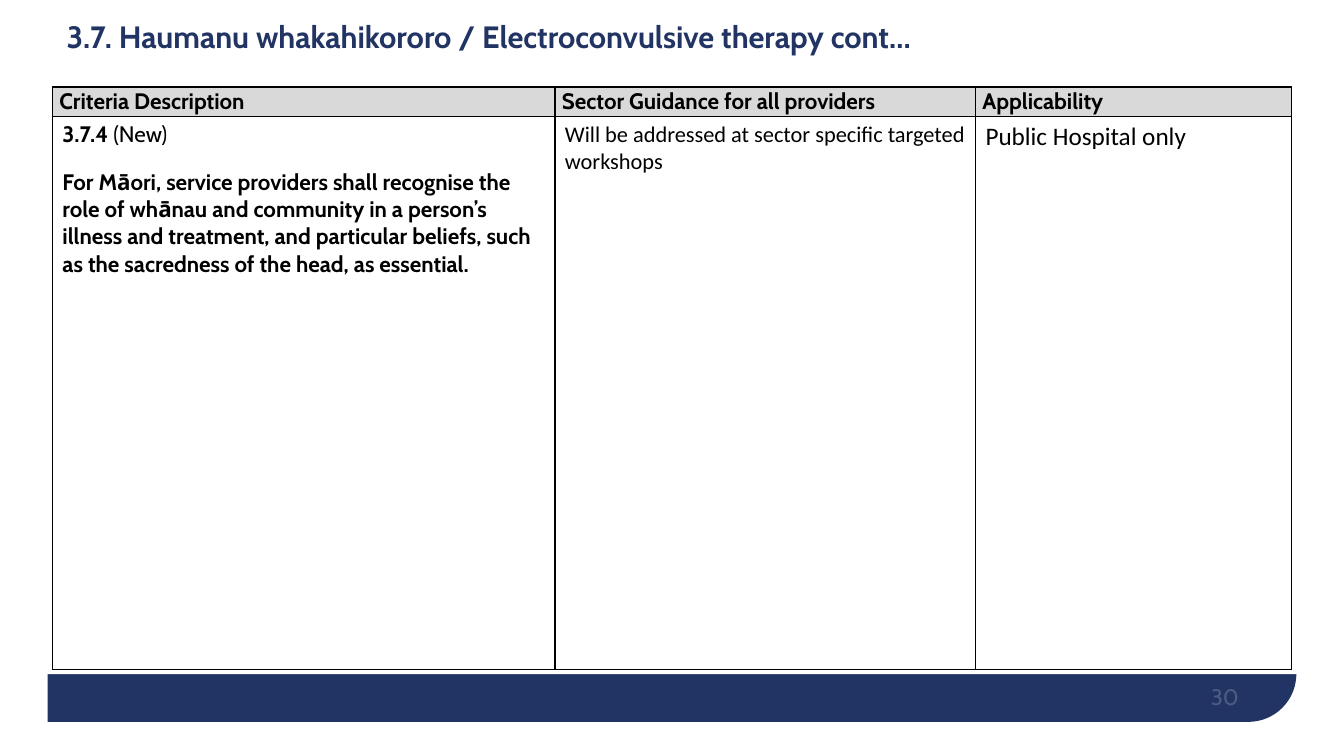
"""Build the electroconvulsive therapy criteria slide."""
from dataclasses import dataclass

from lxml import etree
from pptx import Presentation
from pptx.dml.color import RGBColor
from pptx.enum.shapes import MSO_SHAPE
from pptx.enum.text import MSO_ANCHOR, PP_ALIGN
from pptx.oxml.ns import qn
from pptx.util import Pt

LEFT, RIGHT = PP_ALIGN.LEFT, PP_ALIGN.RIGHT
TOP, MIDDLE, BOTTOM = MSO_ANCHOR.TOP, MSO_ANCHOR.MIDDLE, MSO_ANCHOR.BOTTOM
RECTANGLE, ONE_ROUND_CORNER = MSO_SHAPE.RECTANGLE, MSO_SHAPE.ROUND_1_RECTANGLE
TITLE_ONLY = 5


@dataclass(frozen=True)
class Theme:
    """Colours, fonts and type sizes."""
    navy: str = "213463"
    white: str = "FFFFFF"
    black: str = "000000"
    header_fill: str = "D9D9D9"
    heading_font: str = "Cabin"
    plain_font: str = "Calibri"
    title_size: int = 22
    large_size: int = 18
    text_size: int = 16


@dataclass(frozen=True)
class Span:
    """A stretch of text in one style."""
    text: str
    font: str
    size: int
    bold: bool = False


class SlideBuilder:
    """Draws elements on one page in one theme."""

    def __init__(self, page, theme):
        """Keep the page and the theme."""
        self.page = page
        self.theme = theme

    def style(self, span, font, size, color, bold=False):
        """Format one run."""
        span.font.name = font
        span.font.size = Pt(size)
        span.font.bold = bold
        span.font.color.rgb = RGBColor.from_string(color)

    def title(self, text, left, top, width, height):
        """Fill the title placeholder and bring it above the panels."""
        box = self.page.shapes.title
        box.left, box.top, box.width, box.height = map(Pt, (left, top, width, height))
        box.text_frame.text = text
        box.text_frame.vertical_anchor = MIDDLE
        para = box.text_frame.paragraphs[0]
        para.alignment = LEFT
        para.line_spacing = 0.9
        self.style(para.runs[0], self.theme.heading_font, self.theme.title_size,
                   self.theme.navy, True)
        self.page.shapes._spTree.append(box._element)

    def panel(self, kind, left, top, width, height, color):
        """Draw a plain filled panel."""
        panel = self.page.shapes.add_shape(kind, *map(Pt, (left, top, width, height)))
        panel.shadow.inherit = False
        panel.fill.solid()
        panel.fill.fore_color.rgb = RGBColor.from_string(color)
        panel.line.fill.background()
        return panel

    def rounded_panel(self, left, top, width, height, color, roundness):
        """Draw a panel with a rounded lower right corner."""
        panel = self.panel(ONE_ROUND_CORNER, left, top, width, height, color)
        panel.adjustments[0] = roundness
        panel.rotation = 180
        panel._element.spPr.find(qn("a:xfrm")).set("flipH", "1")

    def page_number(self, text, left, top, width, height, opacity):
        """Write a translucent page number."""
        box = self.page.shapes.add_textbox(*map(Pt, (left, top, width, height)))
        frame = box.text_frame
        frame.text = text
        frame.word_wrap = True
        frame.vertical_anchor = BOTTOM
        frame.margin_left = frame.margin_right = 0
        frame.margin_top = frame.margin_bottom = 0
        para = frame.paragraphs[0]
        para.alignment = RIGHT
        span = para.runs[0]
        self.style(span, self.theme.heading_font, self.theme.text_size, self.theme.white)
        color = span.font.fill._xPr.find(".//" + qn("a:srgbClr"))
        etree.SubElement(color, qn("a:alpha")).set("val", str(opacity * 1000))

    def borders(self, cell):
        """Give a cell thin black edges."""
        properties = cell._tc.get_or_add_tcPr()
        for index, edge in enumerate(("a:lnL", "a:lnR", "a:lnT", "a:lnB")):
            line = etree.Element(qn(edge), w=str(Pt(1)))
            fill = etree.SubElement(line, qn("a:solidFill"))
            etree.SubElement(fill, qn("a:srgbClr"), val=self.theme.black)
            properties.insert(index, line)

    def cell(self, cell, paragraphs, fill):
        """Fill a cell with paragraphs made of spans."""
        cell.fill.solid()
        cell.fill.fore_color.rgb = RGBColor.from_string(fill)
        self.borders(cell)
        frame = cell.text_frame
        for index, spans in enumerate(paragraphs):
            para = frame.add_paragraph() if index else frame.paragraphs[0]
            if index:
                para.space_before = Pt(6)
            para.space_after = Pt(9)
            for item in spans:
                span = para.add_run()
                span.text = item.text
                self.style(span, item.font, item.size, self.theme.black, item.bold)

    def table(self, left, top, widths, heights, headers, contents):
        """Draw a table with a header row and one content row."""
        table = self.page.shapes.add_table(
            len(heights), len(widths), Pt(left), Pt(top),
            Pt(sum(widths)), Pt(sum(heights))).table
        table.horz_banding = False
        for column, width in zip(table.columns, widths):
            column.width = Pt(width)
        for row, height in zip(table.rows, heights):
            row.height = Pt(height)
        for index, (header, content) in enumerate(zip(headers, contents)):
            head, body = table.cell(0, index), table.cell(1, index)
            head.margin_left = head.margin_right = Pt(5)
            head.margin_top = head.margin_bottom = 0
            head.vertical_anchor, body.vertical_anchor = MIDDLE, TOP
            label = Span(header, self.theme.heading_font, self.theme.text_size, True)
            self.cell(head, [[label]], self.theme.header_fill)
            self.cell(body, content, self.theme.white)


def main():
    """Create and save the deck."""
    deck = Presentation()
    deck.slide_width, deck.slide_height = Pt(960), Pt(540)
    theme = Theme()
    page = deck.slides.add_slide(deck.slide_layouts[TITLE_ONLY])
    builder = SlideBuilder(page, theme)
    heading, plain, size = theme.heading_font, theme.plain_font, theme.text_size

    builder.rounded_panel(34, 26.6, 892, 489, theme.navy, roundness=0.07)
    builder.panel(RECTANGLE, 0, 0, 960, 481.6, theme.white)
    builder.page_number("30", 669, 478.5, 216, 28.8, opacity=20)
    builder.title("3.7. Haumanu whakahikororo / Electroconvulsive therapy cont…",
                  40.3, 12.6, 828, 30)
    criterion = [
        [Span("3.7.4 ", heading, size, True), Span("(New)", heading, size)],
        [Span("For Māori, service providers shall recognise the role of whānau and "
              "community in a person’s illness and treatment, and particular beliefs, "
              "such as the sacredness of the head, as essential.", heading, size, True)],
    ]
    guidance = [[Span("Will be addressed at sector specific targeted workshops",
                      plain, size)]]
    applicability = [[Span("Public Hospital only", plain, theme.large_size)]]
    builder.table(
        37.4, 62.1, (359, 300.4, 226), (20.9, 395),
        ("Criteria Description", "Sector Guidance for all providers", "Applicability"),
        (criterion, guidance, applicability))
    deck.save("out.pptx")


if __name__ == "__main__":
    main()
